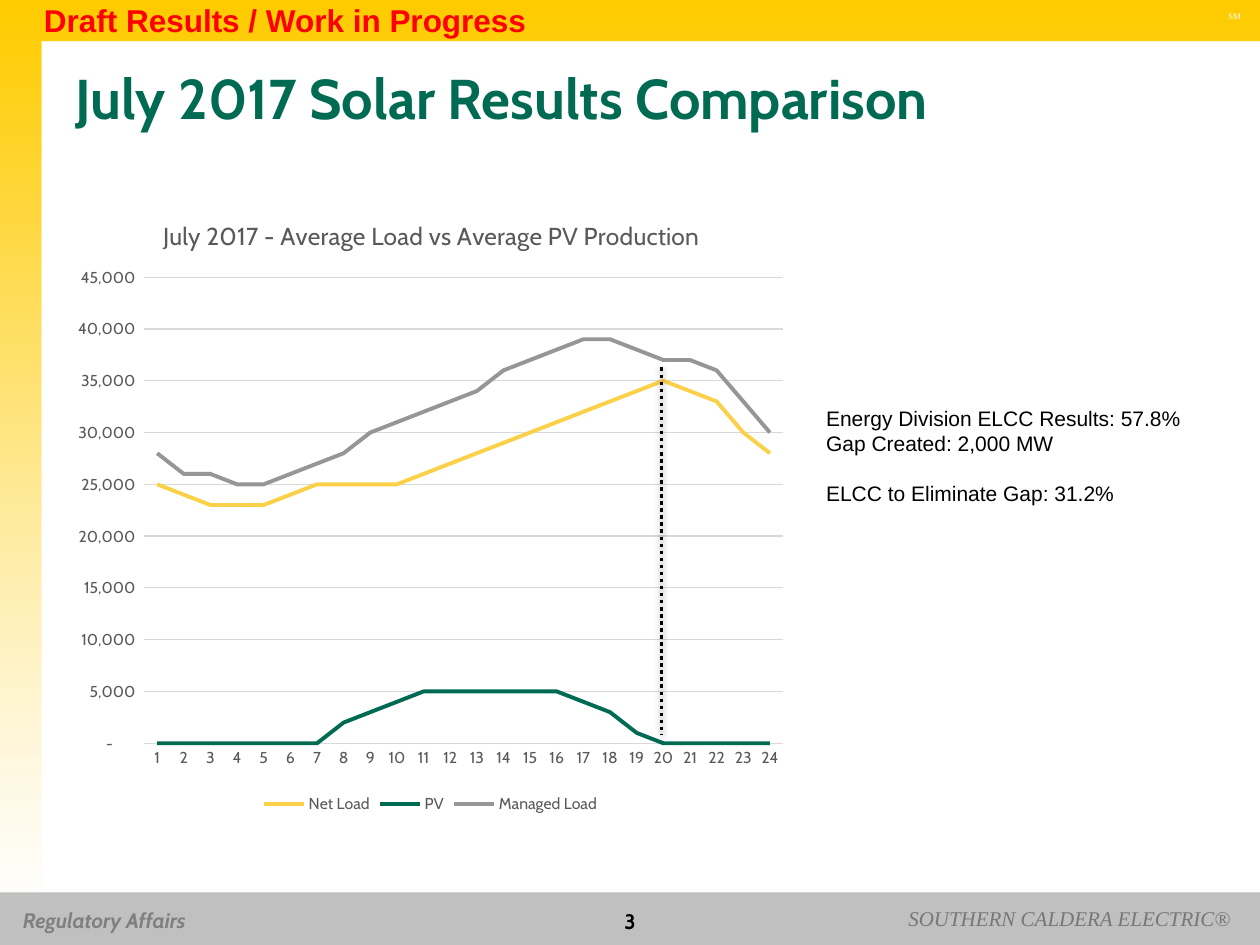
from lxml import etree
from pptx import Presentation
from pptx.chart.data import CategoryChartData as Data
from pptx.dml.color import RGBColor as RGB
from pptx.enum.chart import XL_CHART_TYPE as Kind, XL_LEGEND_POSITION as Place, XL_TICK_MARK as Tick
from pptx.enum.dml import MSO_LINE as Dash
from pptx.enum.shapes import MSO_CONNECTOR as Link, MSO_SHAPE as Shape
from pptx.enum.text import MSO_ANCHOR as Anchor, PP_ALIGN as Align
from pptx.oxml import parse_xml
from pptx.oxml.ns import nsdecls, qn
from pptx.util import Inches, Pt

GOLD, WHITE, BLACK = RGB(255, 204, 0), RGB(255, 255, 255), RGB(0, 0, 0)
GREEN, RED = RGB(0, 106, 83), RGB(255, 0, 0)
YELLOW, GREY, SILVER = RGB(250, 209, 73), RGB(150, 150, 150), RGB(192, 192, 192)
DIM, SOFT, INK, RULE = RGB(127, 127, 127), RGB(119, 119, 119), RGB(89, 89, 89), RGB(217, 217, 217)

# Grid of 120 columns by 90 rows
COLS, ROWS = 120, 90
deck = Presentation()
deck.slide_width, deck.slide_height = Inches(10), Inches(7.5)
unit = deck.slide_width / COLS
slide = deck.slides.add_slide(deck.slide_layouts[6])
shapes = slide.shapes


def grid(*cells):
    return [round(cell * unit) for cell in cells]


def write(box, lines, size, font, color, bold=False, slant=False,
          align=Align.LEFT, wrap=False, anchor=Anchor.TOP):
    frame = shapes.add_textbox(*grid(*box)).text_frame
    frame.word_wrap, frame.vertical_anchor = wrap, anchor
    frame.text = "\n".join(lines)
    for para in frame.paragraphs:
        para.alignment = align
        face = para.font
        face.name, face.size, face.color.rgb = font, Pt(size), color
        face.bold, face.italic = bold, slant
    return frame


# Gold frame along the left and top, two see-through layers
edge, foot = 4, 87
for layer in range(2):
    path = shapes.build_freeform(0, foot, scale=unit)
    path.add_line_segments([(0, 0), (COLS, 0), (COLS, edge), (edge, edge), (edge, foot)])
    band = path.convert_to_shape()
    band.shadow.inherit = False
    band.line.fill.background()
    band.fill.gradient()
    band.fill.gradient_angle = 270
    for stop, color in zip(band.fill.gradient_stops, (GOLD, WHITE)):
        stop.color.rgb = color
    last = band._element.spPr.findall(".//" + qn("a:srgbClr"))[-1]
    etree.SubElement(last, qn("a:alpha")).set("val", "40000")

# Footer bar
bar = shapes.add_shape(Shape.RECTANGLE, *grid(0, 85, COLS, 5))
bar.shadow.inherit = False
bar.fill.solid()
bar.fill.fore_color.rgb = SILVER
bar.line.fill.background()

# Footer, banner and title text
write((1, 85.8, 20.9, 3.6), ["Regulatory Affairs"], 12, "Cabin", DIM, True, True)
write((115.8, 0.4, 3.6, 2.2), ["SM"], 5, "Times New Roman", WHITE)
write((84.7, 85.7, 33.7, 3.6), ["SOUTHERN CALDERA ELECTRIC®"], 12, "Times New Roman", SOFT,
      slant=True, align=Align.RIGHT)
write((46, 85.7, 28, 4), ["3"], 12, "Cabin", BLACK, True,
      align=Align.CENTER, wrap=True, anchor=Anchor.MIDDLE)
write((3, -0.5, 48.8, 4.8), ["Draft Results / Work in Progress"], 18, "Arial", RED, True)
write((6, 4.5, 108, 9.5), ["July 2017 Solar Results Comparison"], 32, "Cabin", GREEN, True,
      wrap=True, anchor=Anchor.MIDDLE)

# Findings beside the chart
notes = write((77.5, 38, 36.5, 13.3), [
    "Energy Division ELCC Results: 57.8%",
    "Gap Created: 2,000 MW",
    "ELCC to Eliminate Gap: 31.2%"], 12, "Arial", BLACK)
notes.paragraphs[2].space_before = Pt(14)

# Load chart, in thousands by hour
loads = [
    ("Net Load", YELLOW, [25, 24, 23, 23, 23, 24, 25, 25, 25, 25, 26, 27,
                          28, 29, 30, 31, 32, 33, 34, 35, 34, 33, 30, 28]),
    ("PV", GREEN, [0, 0, 0, 0, 0, 0, 0, 2, 3, 4, 5, 5,
                   5, 5, 5, 5, 4, 3, 1, 0, 0, 0, 0, 0]),
    ("Managed Load", GREY, [28, 26, 26, 25, 25, 26, 27, 28, 30, 31, 32, 33,
                            34, 36, 37, 38, 39, 39, 38, 37, 37, 36, 33, 30]),
]
data = Data()
data.categories = [str(hour) for hour in range(1, 25)]
for name, color, vals in loads:
    data.add_series(name, [val * 1000 for val in vals])
chart = shapes.add_chart(Kind.LINE, *grid(6, 18, 70, 60), data).chart
chart.font.name, chart.font.size, chart.font.color.rgb = "Cabin", Pt(9), INK
chart.plots[0].vary_by_categories = False
for line, (name, color, vals) in zip(chart.plots[0].series, loads):
    line.smooth = False
    line.format.line.color.rgb = color
    line.format.line.width = Pt(2.25)

# Chart title and legend
chart.has_title = True
head = chart.chart_title.text_frame
head.text = "July 2017 - Average Load vs Average PV Production"
face = head.paragraphs[0].font
face.name, face.size, face.bold, face.color.rgb = "Cabin", Pt(14), False, INK
chart.has_legend = True
chart.legend.position = Place.BOTTOM
chart.legend.include_in_layout = False

# Axes
hours, load = chart.category_axis, chart.value_axis
for axis in (hours, load):
    axis.major_tick_mark = axis.minor_tick_mark = Tick.NONE
load.minimum_scale, load.maximum_scale, load.major_unit = 0, 45000, 5000
load.format.line.fill.background()
load.tick_labels.number_format = '_(* #,##0_);_(* \\(#,##0\\);_(* "-"??_);_('
load.tick_labels.number_format_is_linked = False
for rule in (hours.format.line, load.major_gridlines.format.line):
    rule.color.rgb, rule.width = RULE, Pt(0.75)

# Places of the title and the plot, as shares of the chart
spots = [
    (chart.chart_title._element, {"x": 0.13, "y": 0.04}),
    (chart._chartSpace.chart.plotArea, {"x": 0.11, "y": 0.14, "w": 0.87, "h": 0.74}),
]
for part, spot in spots:
    for old in part.findall(qn("c:layout")):
        part.remove(old)
    inner = '<c:layoutTarget val="inner"/>' if "w" in spot else ""
    modes = "".join(f'<c:{key}Mode val="edge"/>' for key in "xy")
    sizes = "".join(f'<c:{key} val="{val}"/>' for key, val in spot.items())
    node = parse_xml(f'<c:layout {nsdecls("c")}><c:manualLayout>{inner}{modes}{sizes}'
                     '</c:manualLayout></c:layout>')
    text = part.find(qn("c:tx"))
    part.insert(0 if text is None else 1, node)

# Dotted mark at hour 20, with a soft shadow
mark = shapes.add_connector(Link.STRAIGHT, *grid(63, 35, 63, 70))
mark.line.color.rgb, mark.line.width = BLACK, Pt(2)
mark.line.dash_style = Dash.ROUND_DOT
mark.line._ln.find(qn("a:prstDash")).set("val", "sysDot")
mark._element.spPr.append(parse_xml(
    f'<a:effectLst {nsdecls("a")}><a:outerShdw blurRad="40000" dist="20000" dir="5400000" '
    'rotWithShape="0"><a:srgbClr val="000000"><a:alpha val="38000"/></a:srgbClr>'
    '</a:outerShdw></a:effectLst>'))

deck.save("out.pptx")
